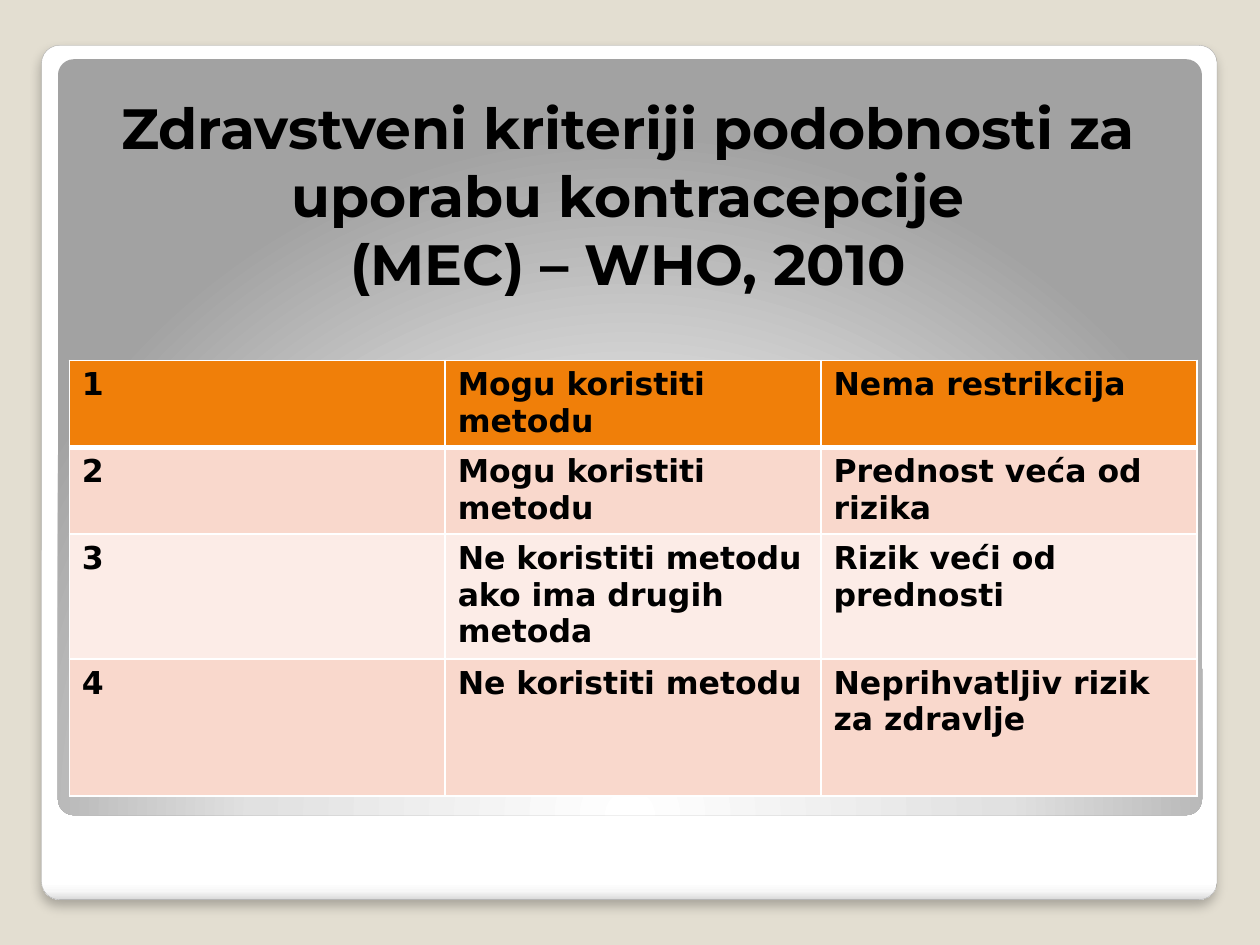
from lxml import etree
from pptx import Presentation
from pptx.dml.color import RGBColor
from pptx.enum.shapes import MSO_SHAPE
from pptx.enum.text import MSO_ANCHOR, MSO_AUTO_SIZE, PP_ALIGN
from pptx.oxml import parse_xml
from pptx.util import Inches, Pt

ROUND = MSO_SHAPE.ROUNDED_RECTANGLE
BOTTOM, CENTER, NOFIT = MSO_ANCHOR.BOTTOM, PP_ALIGN.CENTER, MSO_AUTO_SIZE.NONE
NS = "http://schemas.openxmlformats.org/drawingml/2006/main"

TITLE = "Zdravstveni kriteriji podobnosti za uporabu kontracepcije\v(MEC) – WHO, 2010"
ROWS = [
    ("1", "Mogu koristiti metodu", "Nema restrikcija"),
    ("2", "Mogu koristiti metodu", "Prednost veća od rizika"),
    ("3", "Ne koristiti metodu ako ima drugih metoda", "Rizik veći od prednosti"),
    ("4", "Ne koristiti metodu", "Neprihvatljiv rizik za zdravlje"),
]
HIGHS = [0.69, 0.69, 0.99, 1.09]
HEAD, BANDS = "F07F09", ["FCECE7", "F9D8CC"]
WIDE = 8.95
TITLE_FONT = {"name": "Montserrat", "size": Pt(32.4), "bold": True}
CELL_FONT = {"name": "DejaVu Sans", "size": Pt(18), "bold": True}
FRAME = [(0, "FFFFFF"), (98, "FFFFFF"), (99, "F7F7F7"), (100, "DADADA")]
PANEL = [(0, "FFFFFF"), (55, "E1E1E1"), (100, "A2A2A2")]
DOWN = '<a:lin ang="5400000" scaled="0"/>'
GLOW = ('<a:path path="circle"><a:fillToRect l="50000" t="175000" '
        'r="50000" b="-75000"/></a:path>')
SHADE = ('<a:outerShdw blurRad="76200" dist="50800" dir="5400000" algn="t" '
         'rotWithShape="0"><a:srgbClr val="000000"><a:alpha val="25000"/>'
         '</a:srgbClr></a:outerShdw>')


def color(code):
    return RGBColor.from_string(code)


def style(font, look):
    for key, value in look.items():
        setattr(font, key, value)
    font.color.rgb = color("000000")


def node(tag, body, attrs=""):
    return parse_xml(f'<a:{tag} xmlns:a="{NS}" {attrs}>{body}</a:{tag}>')


def card(slide, box, stops, way):
    shape = slide.shapes.add_shape(ROUND, *map(Inches, box))
    shape.adjustments[0] = 0.021
    shape.shadow.inherit = False
    shape.line.fill.background()
    stops = "".join(f'<a:gs pos="{pos * 1000}"><a:srgbClr val="{code}"/></a:gs>'
                    for pos, code in stops)
    fill = node("gradFill", f"<a:gsLst>{stops}</a:gsLst>{way}", 'rotWithShape="1"')
    shape.element.spPr.find(f"{{{NS}}}prstGeom").addnext(fill)
    return shape


def border(cell, sides):
    props = cell._tc.get_or_add_tcPr()
    for spot, (side, width) in enumerate(sides.items()):
        body = '<a:solidFill><a:srgbClr val="FFFFFF"/></a:solidFill>'
        props.insert(spot, node(f"ln{side}", body, f'w="{Pt(width)}"'))


def grid(slide):
    count = len(ROWS[0])
    box = map(Inches, (0.55, 2.86, WIDE, sum(HIGHS)))
    table = slide.shapes.add_table(len(ROWS), count, *box).table
    for col in table.columns:
        col.width = Inches(WIDE / count)
    for r, texts in enumerate(ROWS):
        table.rows[r].height = Inches(HIGHS[r])
        for c, text in enumerate(texts):
            cell = table.cell(r, c)
            cell.text = text
            style(cell.text_frame.paragraphs[0].runs[0].font, CELL_FONT)
            cell.fill.solid()
            cell.fill.fore_color.rgb = color(BANDS[r % 2] if r else HEAD)
            border(cell, {"L": 1, "R": 1, "T": 3 if r == 1 else 1,
                          "B": 1 if r else 3})


def heading(slide):
    title = slide.shapes.title
    slide.shapes._spTree.append(title.element)
    title.left, title.top, title.width, title.height = map(
        Inches, (0.51, 0.6, WIDE, 1.81))
    frame = title.text_frame
    frame.text = TITLE
    frame.word_wrap, frame.auto_size = True, NOFIT
    frame.vertical_anchor = BOTTOM
    para = frame.paragraphs[0]
    para.alignment = CENTER
    for run in para.runs:
        style(run.font, TITLE_FONT)


def main():
    deck = Presentation()
    deck.slide_width, deck.slide_height = Inches(10), Inches(7.5)
    slide = deck.slides.add_slide(deck.slide_layouts[5])
    slide.background.fill.solid()
    slide.background.fill.fore_color.rgb = color("E3DED1")
    frame = card(slide, (0.33, 0.36, 9.33, 6.78), FRAME, DOWN)
    frame.line.color.rgb = color("A4A4A4")
    frame.line.width = Pt(0.16)
    effects = frame.element.spPr.find(f"{{{NS}}}effectLst")
    effects.append(etree.fromstring(SHADE.replace("<a:outerShdw", f'<a:outerShdw xmlns:a="{NS}"', 1)))
    card(slide, (0.46, 0.47, 9.08, 6), PANEL, GLOW)
    heading(slide)
    grid(slide)
    deck.save("out.pptx")


if __name__ == "__main__":
    main()
